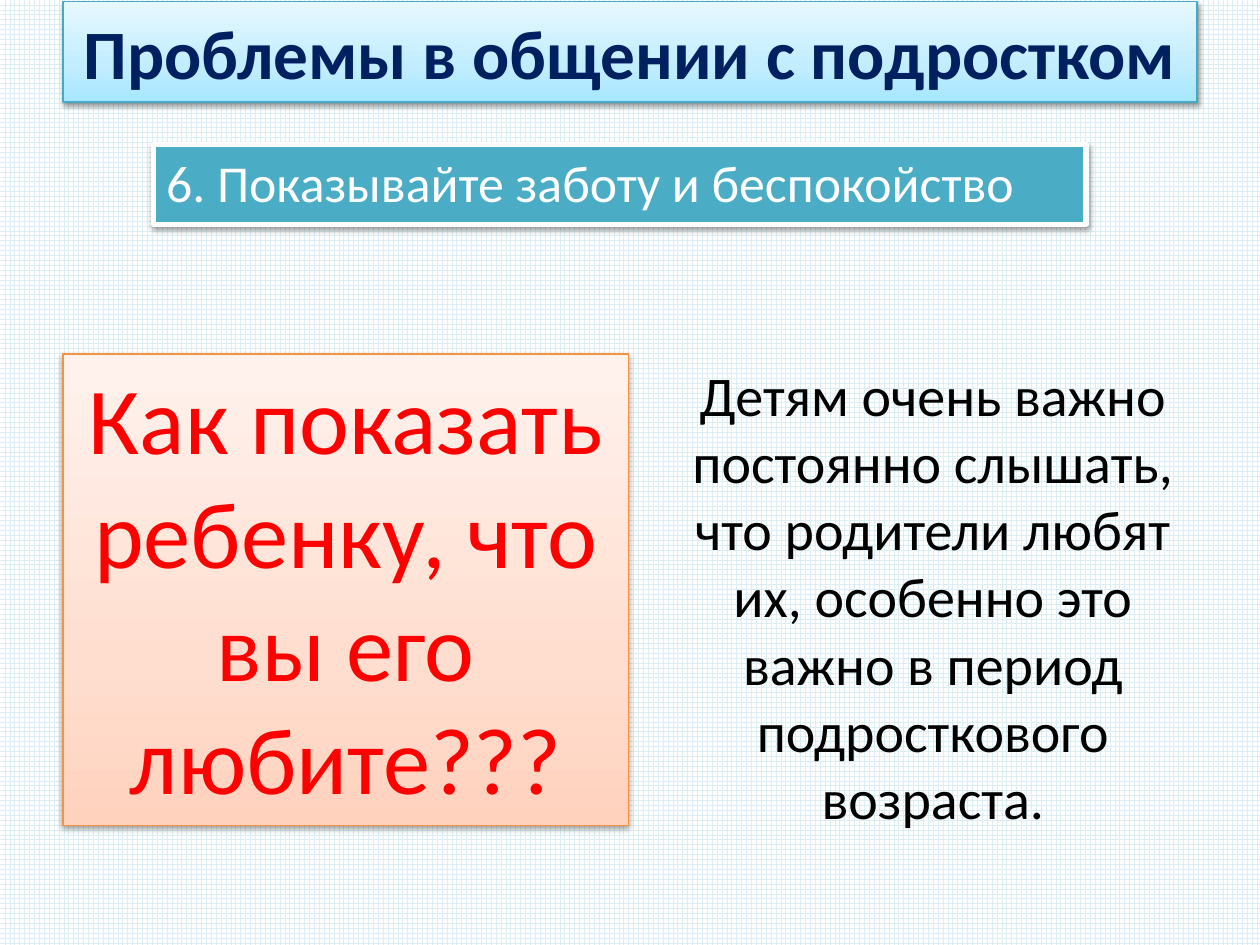
"""Build a slide about showing care when talking with a teenager."""
from copy import deepcopy

from pptx import Presentation
from pptx.dml.color import RGBColor
from pptx.enum.dml import MSO_PATTERN
from pptx.enum.shapes import MSO_SHAPE
from pptx.enum.text import MSO_ANCHOR, PP_ALIGN
from pptx.oxml import parse_xml
from pptx.util import Inches, Pt

COLORS = {
    "paper": "FFFFFF", "grid": "DBEEF4", "teal": "4BACC6", "white": "FFFFFF",
    "navy": "002060", "red": "FF0000", "black": "000000",
    "title_line": "46AAC5", "question_line": "F69240",
}
BLUES = ["A7E6FF", "C1EDFF", "E7F8FF"]
PEACHES = ["FFD2BD", "FFDED0", "FFF2ED"]
SHADOW = (
    '<a:effectLst xmlns:a="http://schemas.openxmlformats.org/drawingml/2006/main">'
    '<a:outerShdw blurRad="39400" dist="20300" dir="5400000" rotWithShape="0">'
    '<a:srgbClr val="000000"><a:alpha val="38000"/></a:srgbClr>'
    '</a:outerShdw></a:effectLst>'
)


def write(box, text, size, color, align, anchor, bold=False):
    frame = box.text_frame
    frame.text = text
    frame.word_wrap = True
    frame.vertical_anchor = anchor
    paragraph = frame.paragraphs[0]
    paragraph.alignment = align
    font = paragraph.runs[0].font
    font.name, font.size, font.bold = "Calibri", Pt(size), bold
    font.color.rgb = RGBColor.from_string(COLORS[color])


def decorate(box, fills, line_color, line_width):
    if len(fills) == 1:
        box.fill.solid()
        box.fill.fore_color.rgb = RGBColor.from_string(fills[0])
    else:
        box.fill.gradient()
        box.fill.gradient_angle = 90
        first_stop = box.element.spPr.xpath(".//a:gs")[0]
        first_stop.addnext(deepcopy(first_stop))
        for stop, position, color in zip(box.fill.gradient_stops, (0, 0.35, 1), fills):
            stop.position = position
            stop.color.rgb = RGBColor.from_string(color)
    box.line.color.rgb = RGBColor.from_string(COLORS[line_color])
    box.line.width = Pt(line_width)
    box.element.spPr.append(parse_xml(SHADOW))


prs = Presentation()
prs.slide_width, prs.slide_height = Inches(10), Inches(7.5)
slide = prs.slides.add_slide(prs.slide_layouts[5])

background = slide.background.fill
background.patterned()
background.pattern = MSO_PATTERN.LARGE_GRID
background.fore_color.rgb = RGBColor.from_string(COLORS["grid"])
background.back_color.rgb = RGBColor.from_string(COLORS["paper"])

title = slide.shapes.title
title.left, title.top = Inches(0.5), Inches(0.01)
title.width, title.height = Inches(9), Inches(0.8)
decorate(title, BLUES, "title_line", 0.75)
write(title, "Проблемы в общении с подростком", 39.6, "navy",
      PP_ALIGN.CENTER, MSO_ANCHOR.MIDDLE, bold=True)

advice = slide.shapes.add_shape(
    MSO_SHAPE.RECTANGLE, Inches(1.22), Inches(1.15), Inches(7.4), Inches(0.63))
decorate(advice, [COLORS["teal"]], "white", 3)
write(advice, "6. Показывайте заботу и беспокойство", 29.6, "white",
      PP_ALIGN.LEFT, MSO_ANCHOR.TOP)

explanation = slide.shapes.add_textbox(
    Inches(5.16), Inches(2.81), Inches(4.49), Inches(3.87))
write(explanation,
      "Детям очень важно постоянно слышать, что родители любят их, "
      "особенно это важно в период подросткового возраста.",
      32, "black", PP_ALIGN.CENTER, MSO_ANCHOR.TOP)

question = slide.shapes.add_shape(
    MSO_SHAPE.RECTANGLE, Inches(0.5), Inches(2.81), Inches(4.49), Inches(3.74))
decorate(question, PEACHES, "question_line", 0.75)
write(question, "Как показать ребенку, что вы его любите???", 54, "red",
      PP_ALIGN.CENTER, MSO_ANCHOR.TOP)

prs.save("out.pptx")
